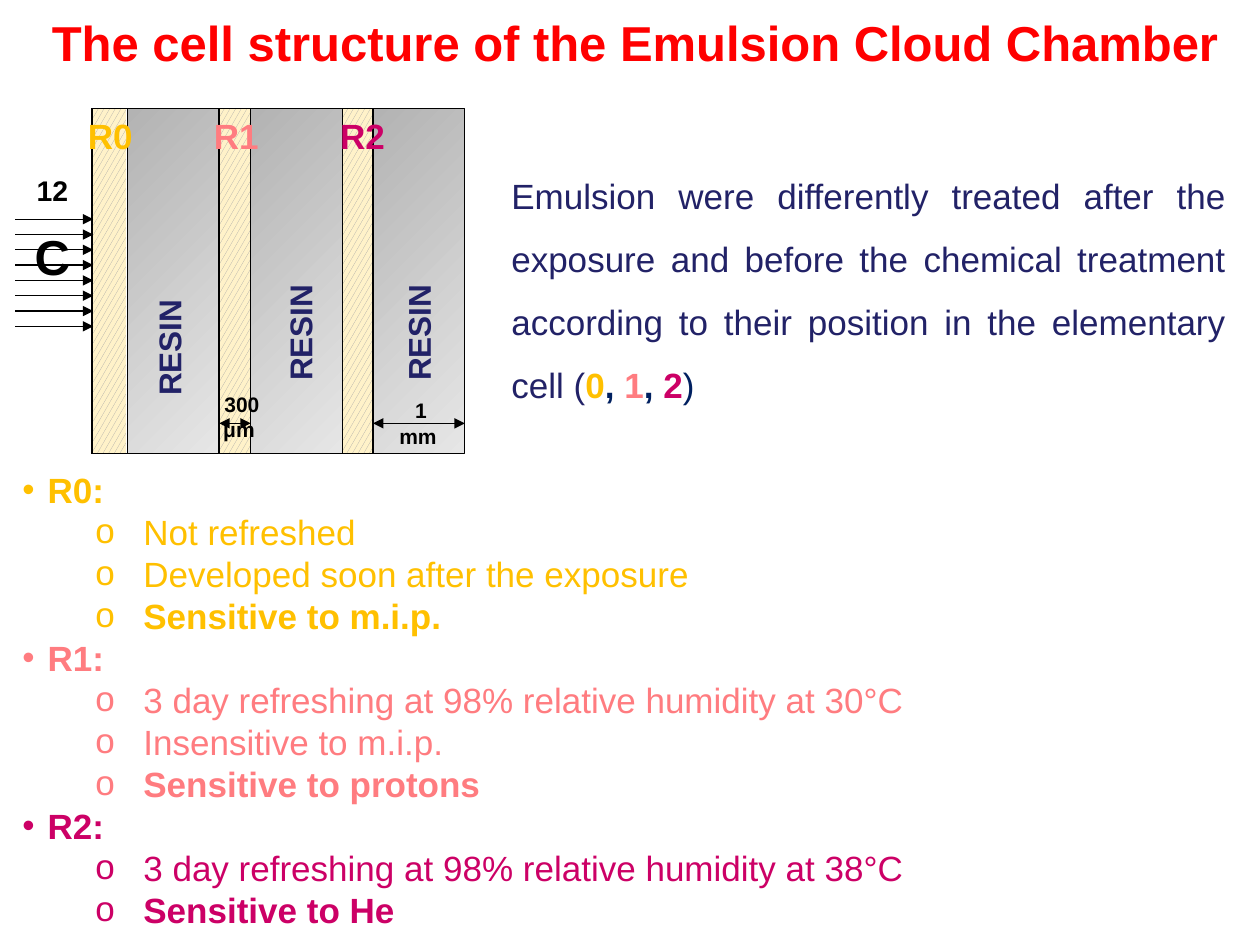
from pptx import Presentation
from pptx.dml.color import RGBColor
from pptx.enum.dml import MSO_PATTERN
from pptx.enum.shapes import MSO_CONNECTOR as CONN, MSO_SHAPE as SHAPE
from pptx.enum.text import MSO_ANCHOR as ANCHOR, MSO_AUTO_SIZE as AUTO, PP_ALIGN as ALIGN
from pptx.oxml.ns import qn
from pptx.util import Inches, Pt
from lxml.etree import SubElement

COLS, ROWS = 100, 75
CELL = Inches(0.1)
BLACK, NAVY, DEEP = "000000", "222267", "002060"
AMBER, PINK, MAGENTA = "FFC000", "FF7C80", "CC0066"
TOP, BOTTOM = 8.6, 36
EMULSION_X, EMULSION_W = (7.4, 17.4, 27.2), 2.6
RESIN_X, RESIN_W = (10.1, 19.9, 29.6), 7.3
BEAM_TOP, BEAM_BOTTOM, BEAM_COUNT = 17.4, 25.9, 8

TREATMENTS = [
    ("R0", AMBER, ["Not refreshed", "Developed soon after the exposure",
                   "Sensitive to m.i.p."]),
    ("R1", PINK, ["3 day refreshing at 98% relative humidity at 30°C",
                  "Insensitive to m.i.p.", "Sensitive to protons"]),
    ("R2", MAGENTA, ["3 day refreshing at 98% relative humidity at 38°C",
                     "Sensitive to He"]),
]


def grid(*cells):
    return [int(c * CELL) for c in cells]


def rgb(hex_color):
    return RGBColor.from_string(hex_color)


def add_run(p, text, size, color, bold=True):
    r = p.add_run()
    r.text = text
    r.font.name = "Arial"
    r.font.size = Pt(size)
    r.font.bold = bold
    r.font.color.rgb = rgb(color)
    return r


def add_text(slide, box, align, runs=(), wrap=True, auto=AUTO.SHAPE_TO_FIT_TEXT):
    sp = slide.shapes.add_textbox(*grid(*box))
    tf = sp.text_frame
    tf.word_wrap = wrap
    tf.auto_size = auto
    p = tf.paragraphs[0]
    p.alignment = align
    for run in runs:
        add_run(p, *run)
    return sp


def add_layer(slide, x, width):
    sp = slide.shapes.add_shape(SHAPE.RECTANGLE, *grid(x, TOP, width, BOTTOM - TOP))
    sp.shadow.inherit = False
    return sp


def add_emulsion(slide, x):
    sp = add_layer(slide, x, EMULSION_W)
    sp.fill.patterned()
    sp.fill.pattern = MSO_PATTERN.LARGE_CONFETTI
    sp.fill.fore_color.rgb = rgb("A6A6A6")
    sp.fill.back_color.rgb = rgb("FFF2C9")
    sp.line.fill.background()


def add_resin(slide, x):
    sp = add_layer(slide, x, RESIN_W)
    sp.fill.gradient()
    sp.fill.gradient_angle = 315
    for stop, color in zip(sp.fill.gradient_stops, ("B3B3B3", "E6E6E6")):
        stop.color.rgb = rgb(color)
    sp.line.color.rgb = rgb(BLACK)
    sp.line.width = Pt(0.75)


def add_line(slide, x1, y1, x2, y2, *ends):
    line = slide.shapes.add_connector(CONN.STRAIGHT, *grid(x1, y1, x2, y2))
    line.line.color.rgb = rgb(BLACK)
    line.line.width = Pt(0.75)
    ln = line.line._get_or_add_ln()
    for end in ends:
        SubElement(ln, qn(f"a:{end}"), type="triangle")
    SubElement(line._element.spPr, qn("a:effectLst"))


def add_resin_label(slide, x, y):
    sp = add_text(slide, (x, y, 3.8, 19), ALIGN.CENTER, [("RESIN", 18, NAVY)])
    sp.rotation = 180
    sp.text_frame._txBody.bodyPr.set("vert", "eaVert")
    pPr = sp.text_frame.paragraphs[0]._p.get_or_add_pPr()
    SubElement(SubElement(pPr, qn("a:spcBef")), qn("a:spcPct"), val="50000")


def add_bullet(p, char, margin, hanging):
    pPr = p._p.get_or_add_pPr()
    pPr.set("marL", str(Inches(margin)))
    pPr.set("indent", str(-Inches(hanging)))
    SubElement(pPr, qn("a:buFont"), typeface="Arial")
    SubElement(pPr, qn("a:buChar"), char=char)


def add_cell(slide):
    for x in reversed(EMULSION_X):
        add_emulsion(slide, x)
    add_line(slide, 7.3, BOTTOM, 7.3, TOP)
    for x in RESIN_X:
        add_resin(slide, x)
    add_line(slide, 7.3, BOTTOM, 33.2, BOTTOM)
    add_line(slide, 7.3, TOP, 35.6, TOP)
    for x, y in ((11.4, 13.4), (21.8, 12.2), (31.2, 12.2)):
        add_resin_label(slide, x, y)


def add_beam(slide):
    gap = (BEAM_BOTTOM - BEAM_TOP) / (BEAM_COUNT - 1)
    for i in range(BEAM_COUNT):
        y = BEAM_TOP + i * gap
        add_line(slide, 1.2, y, 7.4, y, "tailEnd")
    sp = add_text(slide, (1.2, 12.8, 5.9, 4.3), ALIGN.CENTER,
                  [("12", 28, BLACK), ("C", 28, BLACK)], wrap=False)
    mass = sp.text_frame.paragraphs[0].runs[0]
    mass.font._element.set("baseline", "30000")


def add_dimension(slide, x1, x2, y, box, text):
    add_line(slide, x1, y, x2, y, "headEnd", "tailEnd")
    add_text(slide, box, ALIGN.CENTER, [(text, 12, BLACK)], wrap=False)


def add_explanation(slide):
    sp = add_text(slide, (39.6, 11.7, 58.7, 21.2), ALIGN.JUSTIFY, [
        ("Emulsion were differently treated after the exposure and before the "
         "chemical treatment according to their position in the elementary cell (",
         20, NAVY, False),
        ("0", 20, AMBER), (", ", 20, DEEP), ("1", 20, PINK), (", ", 20, DEEP),
        ("2", 20, MAGENTA), (")", 20, DEEP, False)])
    p = sp.text_frame.paragraphs[0]
    p.line_spacing = 1.5
    p.space_before = p.space_after = Pt(6)


def add_treatments(slide):
    tf = add_text(slide, (0.8, 36.7, 78.4, 38), ALIGN.JUSTIFY).text_frame
    p = tf.paragraphs[0]
    for name, color, steps in TREATMENTS:
        if p.runs:
            p = tf.add_paragraph()
        p.alignment = ALIGN.JUSTIFY
        add_bullet(p, "•", 0.2, 0.2)
        add_run(p, f"{name}:", 20, color)
        for step in steps:
            p = tf.add_paragraph()
            p.level = 1
            p.alignment = ALIGN.JUSTIFY
            add_bullet(p, "o", 0.96, 0.38)
            add_run(p, step, 20, color, step == steps[-1])


def main():
    prs = Presentation()
    prs.slide_width, prs.slide_height = grid(COLS, ROWS)
    slide = prs.slides.add_slide(prs.slide_layouts[6])
    title = add_text(slide, (0.4, 0, COLS, 6.7), ALIGN.CENTER,
                     [("The cell structure of the Emulsion Cloud Chamber", 28, "FF0000")],
                     auto=AUTO.NONE)
    title.text_frame.vertical_anchor = ANCHOR.MIDDLE
    add_cell(slide)
    add_beam(slide)
    add_dimension(slide, 29.6, 36.9, 33.6, (30.3, 31.1, 6.2, 2.7), "1 mm ")
    add_dimension(slide, 17.4, 19.9, 33.6, (15.5, 30.6, 7.4, 2.7), "300 μm ")
    add_explanation(slide)
    add_treatments(slide)
    for (name, color, _), x, width in zip(TREATMENTS, (6, 16, 26), (5.6, 5.7, 7.1)):
        add_text(slide, (x, TOP, width, 4.4), ALIGN.JUSTIFY, [(name, 20, color)])
    prs.save("out.pptx")


if __name__ == "__main__":
    main()
